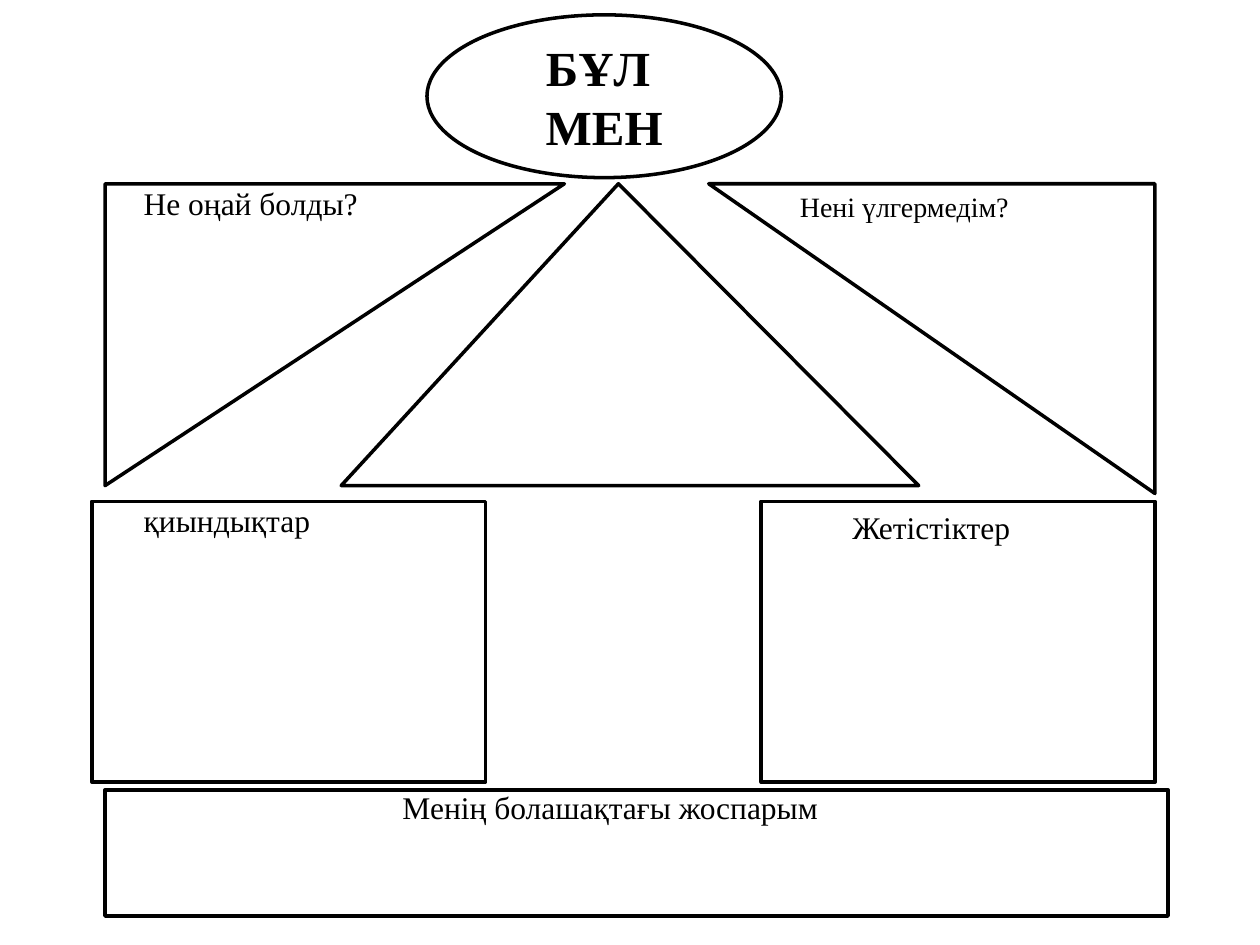
"""Build a one-slide self-reflection worksheet with outlined areas and labels."""
from typing import NamedTuple, Optional

from pptx import Presentation
from pptx import util as u
from pptx.dml.color import RGBColor
from pptx.enum import shapes, text

BLACK = RGBColor(0, 0, 0)
WHITE = RGBColor(255, 255, 255)
MSO = shapes.MSO_SHAPE
CENTER = text.PP_ALIGN.CENTER
LEFT = text.PP_ALIGN.LEFT


class Box(NamedTuple):
    x: float
    y: float
    w: float
    h: float


class Area(NamedTuple):
    kind: int
    box: Box
    apex: Optional[float] = None
    rotation: float = 0
    mirrored: bool = False


class Label(NamedTuple):
    words: str
    box: Box
    size: float = 18
    align: int = LEFT


ROW_TOP, ROW_MID = 105, 286.5
TITLE_AREA = Area(MSO.OVAL, Box(244, 8.5, 202.5, 93))
TITLE_LINES = ("БҰЛ ", "МЕН")
AREAS = (
    Area(MSO.ISOSCELES_TRIANGLE, Box(195, ROW_TOP, 330, 172.5), 0.48),
    Area(MSO.RECTANGLE, Box(52.5, ROW_MID, 225, 160.5)),
    Area(MSO.RECTANGLE, Box(435, ROW_MID, 225, 160.5)),
    Area(MSO.ISOSCELES_TRIANGLE, Box(60, ROW_TOP, 262.5, 172.5), 1, 180),
    Area(MSO.ISOSCELES_TRIANGLE, Box(405, ROW_TOP, 255, 177), 1, 180, True),
    Area(MSO.RECTANGLE, Box(60, 451.5, 607.5, 72)),
)
LABELS = (
    Label("Не оңай болды?", Box(75, 101.5, 195, 29)),
    Label("қиындықтар", Box(75, 283, 195, 29)),
    Label("Нені үлгермедім?", Box(450, ROW_TOP, 195, 26.5), 16),
    Label("Жетістіктер", Box(480, ROW_MID, 195, 29)),
    Label("Менің болашақтағы жоспарым", Box(60, 447, 577.5, 29), 18, CENTER),
)


def write(p, words: str, size: float, align: int, bold: bool = False) -> None:
    p.alignment = align
    r = p.add_run()
    r.text = words
    formats = {"name": "Times New Roman", "size": u.Pt(size), "bold": bold}
    for name, value in formats.items():
        setattr(r.font, name, value)
    r.font.color.rgb = BLACK


def draw_area(s, area: Area):
    sp = s.shapes.add_shape(area.kind, *map(u.Pt, area.box))
    sp.shadow.inherit = False
    sp.rotation = area.rotation
    if area.apex is not None:
        sp.adjustments[0] = area.apex
    if area.mirrored:
        sp._element.spPr.xfrm.set("flipH", "1")
    sp.fill.solid()
    sp.fill.fore_color.rgb = WHITE
    sp.line.color.rgb = BLACK
    sp.line.width = u.Pt(2)
    return sp


def draw_title(s) -> None:
    tf = draw_area(s, TITLE_AREA).text_frame
    tf.vertical_anchor = text.MSO_ANCHOR.MIDDLE
    for i, words in enumerate(TITLE_LINES):
        p = tf.add_paragraph() if i else tf.paragraphs[0]
        write(p, words, 28, CENTER, True)


def draw_label(s, label: Label) -> None:
    tf = s.shapes.add_textbox(*map(u.Pt, label.box)).text_frame
    formats = {"word_wrap": True, "auto_size": text.MSO_AUTO_SIZE.SHAPE_TO_FIT_TEXT}
    for name, value in formats.items():
        setattr(tf, name, value)
    write(tf.paragraphs[0], label.words, label.size, label.align)


def main() -> None:
    prs = Presentation()
    prs.slide_width, prs.slide_height = u.Pt(720), u.Pt(540)
    s = prs.slides.add_slide(prs.slide_layouts[6])
    draw_title(s)
    for area in AREAS:
        draw_area(s, area)
    for label in LABELS:
        draw_label(s, label)
    prs.save("out.pptx")


if __name__ == "__main__":
    main()
